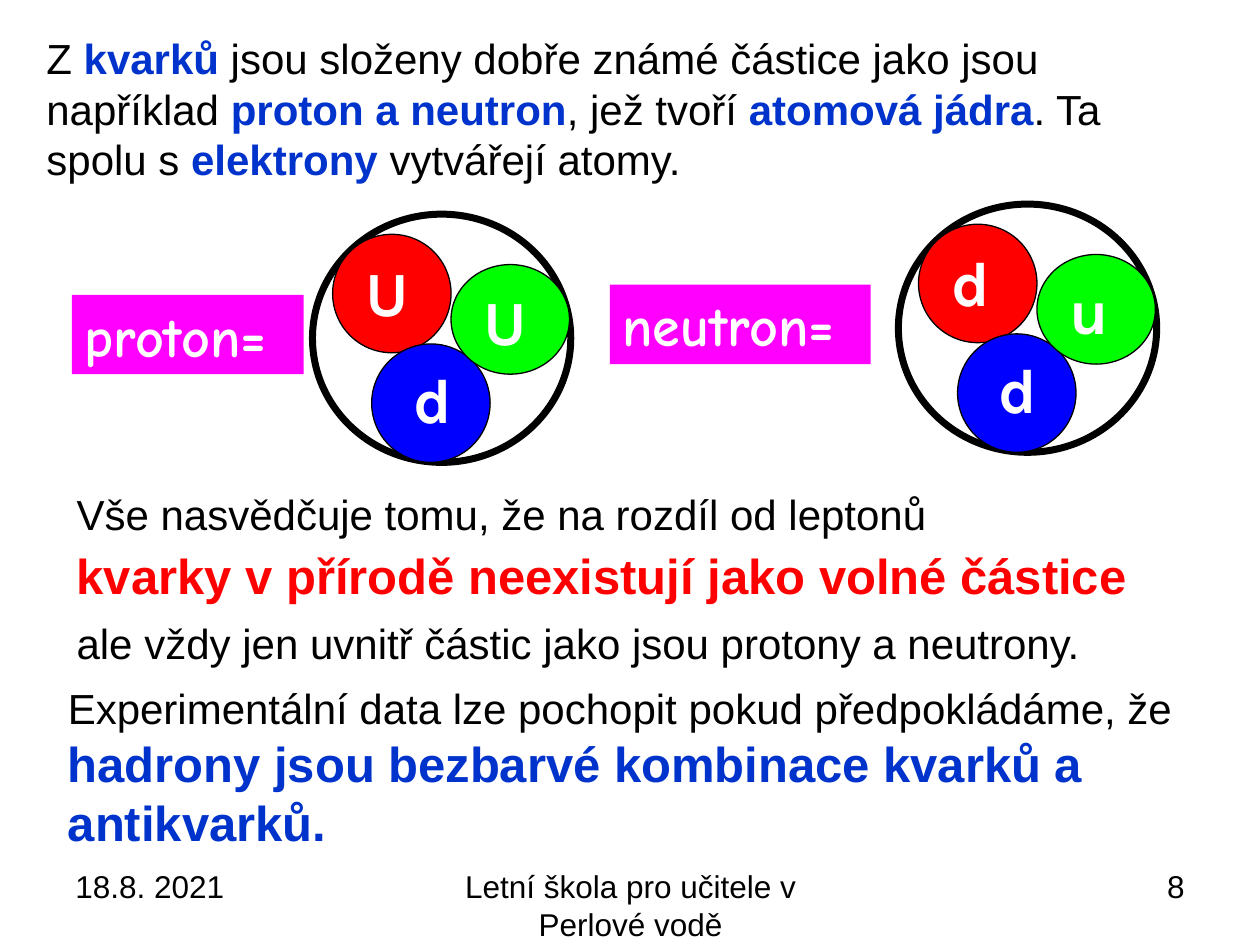
import pptx
import pptx.dml.color
import pptx.enum.shapes
import pptx.enum.text
import pptx.util
from pptx.util import Inches

BLACK, WHITE, BLUE, RED = "000000", "FFFFFF", "0033CC", "FF0000"
OVAL = pptx.enum.shapes.MSO_SHAPE.OVAL
ALIGN = pptx.enum.text.PP_ALIGN
rgb = pptx.dml.color.RGBColor.from_string


def add_text(shapes, box, runs, font="Arial", align=ALIGN.LEFT, wrap=True):
    """Add a text box; each run is (text, size, colour, bold)."""
    shape = shapes.add_textbox(*map(Inches, box))
    shape.text_frame.word_wrap = wrap
    paragraph = shape.text_frame.paragraphs[0]
    paragraph.alignment = align
    paragraph.font.name = font
    for text, size, colour, bold in runs:
        run = paragraph.add_run()
        run.text = text
        run.font.size = pptx.util.Pt(size)
        run.font.color.rgb = rgb(colour)
        run.font.bold = bold
    return shape


def add_circle(shapes, box, fill, line_width):
    shape = shapes.add_shape(OVAL, *map(Inches, box))
    shape.shadow.inherit = False
    if fill:
        shape.fill.solid()
        shape.fill.fore_color.rgb = rgb(fill)
    else:
        shape.fill.background()
    shape.line.color.rgb = rgb(BLACK)
    shape.line.width = pptx.util.Pt(line_width)


presentation = pptx.Presentation()
presentation.slide_width = Inches(10)
presentation.slide_height = Inches(7.5)
slide = presentation.slides.add_slide(presentation.slide_layouts[6])

# Footer
for left, width, text, align in [
    (0.5, 2.33, "18.8. 2021", ALIGN.LEFT),
    (3.42, 3.17, "Letní škola pro učitele v Perlové vodě", ALIGN.CENTER),
    (7.17, 2.33, "8", ALIGN.RIGHT),
]:
    add_text(slide.shapes, (left, 6.83, width, 0.52), [(text, 18, BLACK, False)], align=align)

# Introduction, with every second run emphasised
intro = [
    "Z ", "kvarků", " jsou složeny dobře známé částice jako jsou například ",
    "proton a neutron", ", jež tvoří ", "atomová jádra", ". Ta spolu s ",
    "elektrony", " vytvářejí atomy.",
]
add_text(slide.shapes, (0.27, 0.21, 8.9, 1.31), [
    (text, 24, BLUE if index % 2 else BLACK, bool(index % 2))
    for index, text in enumerate(intro)
])

# Quarks inside a particle: offset and size, fill, letter offset
quarks = [
    (0.16, 0.16, 0.94, 0.94, "FF0000", 0.32, 0.26),
    (0.47, 1.03, 0.94, 0.94, "0000FF", 0.70, 1.11),
    (1.10, 0.40, 0.94, 0.87, "00FF00", 1.26, 0.49),
]

# Particles: label, label box, circle position, letters in quark order
particles = [
    ("proton=", (0.57, 2.34, 1.84, 0.63), 2.48, 1.70, "UdU"),
    ("neutron=", (4.84, 2.26, 2.07, 0.63), 7.13, 1.62, "ddu"),
]
for label, label_box, left, top, letters in particles:
    label_shape = add_text(slide.shapes, label_box, [(label, 32, WHITE, True)],
                           font="Comic Neue", wrap=False)
    label_shape.fill.solid()
    label_shape.fill.fore_color.rgb = rgb("FF00FF")

    group = slide.shapes.add_group_shape()
    add_circle(group.shapes, (left, top, 2.05, 1.97), None, 4)
    for x, y, width, height, fill, *_ in quarks:
        add_circle(group.shapes, (left + x, top + y, width, height), fill, 0.75)
    for (*_, x, y), letter in zip(quarks, letters):
        letter_width = 0.56 if letter == "U" else 0.48
        add_text(group.shapes, (left + x, top + y, letter_width, 0.7),
                 [(letter, 36, WHITE, True)], font="Karla", wrap=False)

# Conclusions
for top, width, height, run in [
    (3.83, 7.28, 0.5, ("Vše nasvědčuje tomu, že na rozdíl od leptonů", 24, BLACK, False)),
    (4.28, 8.98, 0.57, ("kvarky v přírodě neexistují jako volné částice", 28, RED, True)),
    (4.85, 8.24, 0.5, ("ale vždy jen uvnitř částic jako jsou protony a neutrony.", 24, BLACK, False)),
]:
    add_text(slide.shapes, (0.51, top, width, height), [run], wrap=False)
add_text(slide.shapes, (0.44, 5.37, 9.06, 1.45), [
    ("Experimentální data lze pochopit pokud předpokládáme, že ", 24, BLACK, False),
    ("hadrony jsou bezbarvé kombinace kvarků a antikvarků.", 28, BLUE, True),
])

presentation.save("out.pptx")
